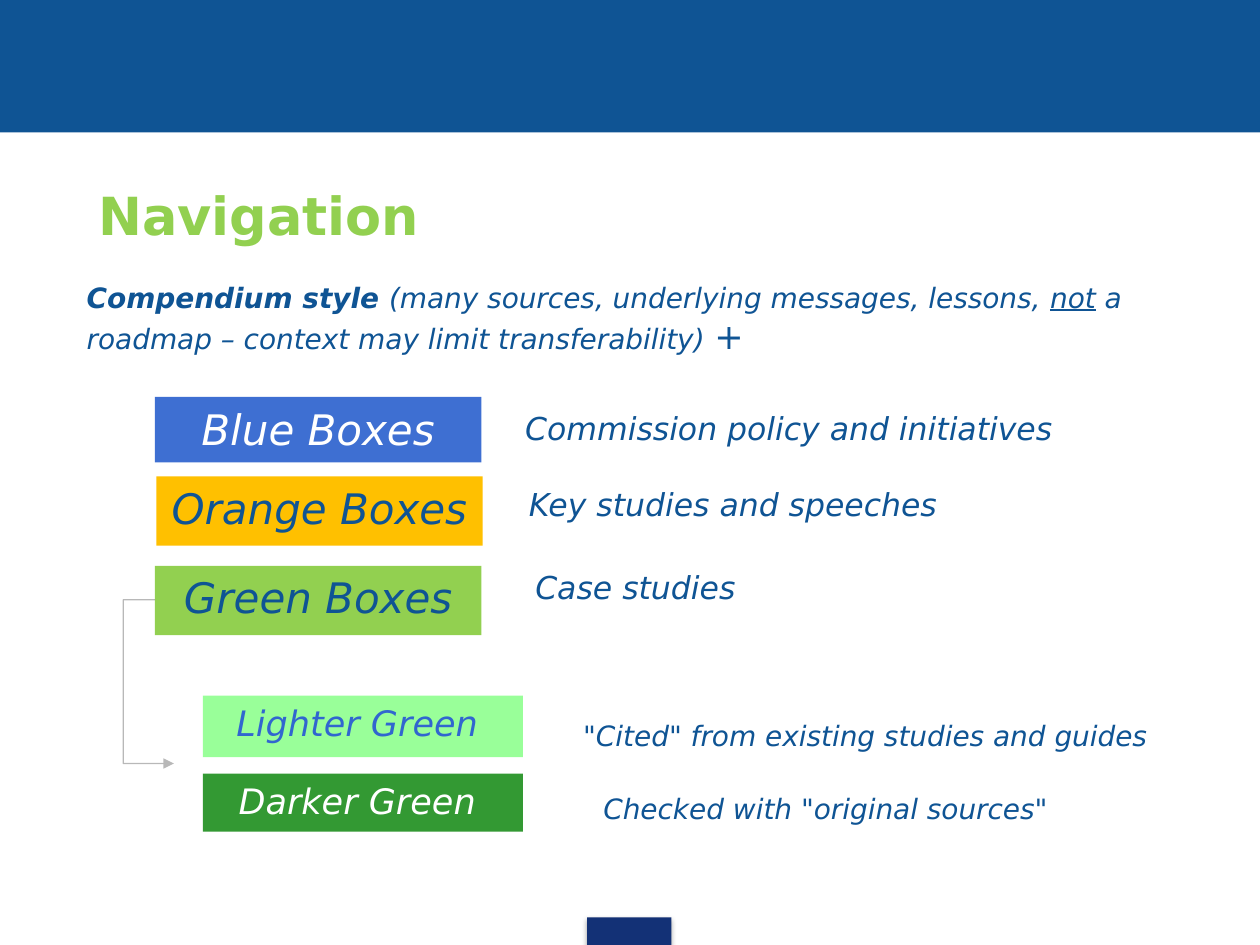
from dataclasses import dataclass

from lxml.etree import SubElement
from pptx import Presentation
from pptx.dml.color import RGBColor
from pptx.enum.shapes import MSO_CONNECTOR, MSO_SHAPE
from pptx.enum.text import MSO_ANCHOR, MSO_AUTO_SIZE, PP_ALIGN
from pptx.oxml import parse_xml
from pptx.oxml.ns import nsdecls, qn
from pptx.util import Inches, Pt


@dataclass(frozen=True)
class Theme:
    font: str = "DejaVu Sans"
    navy: str = "0F5494"
    marker: str = "133176"
    white: str = "FFFFFF"
    black: str = "000000"
    green: str = "92D050"
    blue: str = "3E6FD2"
    orange: str = "FFC000"
    light_green: str = "99FF99"
    dark_green: str = "339933"
    link_blue: str = "3166CF"
    title: int = 30
    box: int = 24
    small_box: int = 20
    label: int = 18
    body: int = 16


THEME = Theme()


def add_run(paragraph, text, size, color=THEME.navy, bold=False, italic=True, underline=False):
    run = paragraph.add_run()
    run.text = text
    font = run.font
    font.name, font.size = THEME.font, Pt(size)
    font.bold, font.italic, font.underline = bold, italic, underline
    font.color.rgb = RGBColor.from_string(color)


def add_rectangle(slide, place, fill):
    shape = slide.shapes.add_shape(MSO_SHAPE.RECTANGLE, *map(Inches, place))
    shape.shadow.inherit = False
    shape.fill.solid()
    shape.fill.fore_color.rgb = RGBColor.from_string(fill)
    shape.line.fill.background()
    return shape


def add_box(slide, place, text, fill, color, size):
    frame = add_rectangle(slide, place, fill).text_frame
    frame.vertical_anchor = MSO_ANCHOR.TOP
    paragraph = frame.paragraphs[0]
    paragraph.alignment = PP_ALIGN.CENTER
    paragraph.space_after = Pt(6)
    add_run(paragraph, text, size, color)


def add_text_box(slide, place):
    """Add an empty wrapping text box and return its first paragraph."""
    frame = slide.shapes.add_textbox(*map(Inches, place)).text_frame
    frame.word_wrap = True
    return frame.paragraphs[0]


def add_label(slide, place, text, size):
    add_run(add_text_box(slide, place), text, size)


def add_title(slide, text):
    title = slide.shapes.title
    title.left, title.top = Inches(0.29), Inches(1.43)
    title.width, title.height = Inches(9), Inches(0.55)
    frame = title.text_frame
    frame.auto_size = MSO_AUTO_SIZE.NONE
    frame.vertical_anchor = MSO_ANCHOR.MIDDLE
    paragraph = frame.paragraphs[0]
    paragraph.alignment = PP_ALIGN.LEFT
    paragraph._p.get_or_add_pPr().set("marL", str(Inches(0.39)))
    add_run(paragraph, text, THEME.title, THEME.green, bold=True, italic=False)


def add_footer_marker(slide):
    marker = add_rectangle(slide, (4.66, 7.28, 0.67, 0.22), THEME.marker)
    effects = marker._element.spPr.find(qn("a:effectLst"))
    effects.append(parse_xml(
        f'<a:outerShdw {nsdecls("a")} blurRad="{Pt(3.1)}" dist="{Pt(1.8)}" dir="5400000" '
        f'rotWithShape="0"><a:srgbClr val="{THEME.black}"><a:alpha val="35000"/>'
        '</a:srgbClr></a:outerShdw>'))


def add_elbow_arrow(slide, start, end, bend):
    """Draw an elbow whose upright part lies at bend, as a share of its width."""
    connector = slide.shapes.add_connector(MSO_CONNECTOR.ELBOW, *map(Inches, start + end))
    connector.line.width = Pt(0.75)
    connector.line.color.rgb = RGBColor.from_string(THEME.black)
    properties = connector._element.spPr
    adjustments = properties.find(qn("a:prstGeom")).get_or_add_avLst()
    SubElement(adjustments, qn("a:gd"), name="adj1", fmla=f"val {round(bend * 100000)}")
    line = properties.find(qn("a:ln"))
    SubElement(line.find(".//" + qn("a:srgbClr")), qn("a:alpha"), val="27000")
    SubElement(line, qn("a:tailEnd"), type="triangle")
    SubElement(properties, qn("a:effectLst"))


def add_introduction(slide):
    paragraph = add_text_box(slide, (0.59, 2.18, 8.74, 0.73))
    add_run(paragraph, "Compendium style ", THEME.body, bold=True)
    add_run(paragraph, "(many sources, underlying messages, lessons, ", THEME.body)
    add_run(paragraph, "not", THEME.body, underline=True)
    add_run(paragraph, " a roadmap – context may limit transferability) ", THEME.body)
    add_run(paragraph, "+", THEME.small_box)


def main():
    presentation = Presentation()
    presentation.slide_width, presentation.slide_height = Inches(10), Inches(7.5)
    slide = presentation.slides.add_slide(presentation.slide_layouts[5])

    add_rectangle(slide, (0, 0, 10, 1.05), THEME.navy)
    add_footer_marker(slide)
    add_title(slide, "Navigation")
    add_introduction(slide)

    boxes = [
        ((1.23, 3.15, 2.59, 0.52), "Blue Boxes", THEME.blue, THEME.white, THEME.box),
        ((1.24, 3.78, 2.59, 0.55), "Orange Boxes", THEME.orange, THEME.navy, THEME.box),
        ((1.23, 4.49, 2.59, 0.55), "Green Boxes", THEME.green, THEME.navy, THEME.box),
        ((1.61, 5.52, 2.54, 0.49), "Lighter Green ", THEME.light_green, THEME.link_blue,
         THEME.small_box),
        ((1.61, 6.14, 2.54, 0.46), "Darker Green ", THEME.dark_green, THEME.white,
         THEME.small_box),
    ]
    for box in boxes:
        add_box(slide, *box)

    labels = [
        ((4.07, 3.2, 4.43, 0.4), "Commission policy and initiatives", THEME.label),
        ((4.1, 3.8, 3.46, 0.4), "Key studies and speeches", THEME.label),
        ((4.15, 4.46, 2.07, 0.4), "Case studies", THEME.label),
        ((4.53, 5.65, 4.96, 0.38), '"Cited" from existing studies and guides', THEME.body),
        ((4.69, 6.23, 4.41, 0.38), 'Checked with "original sources"', THEME.body),
    ]
    for label in labels:
        add_label(slide, *label)

    add_elbow_arrow(slide, (1.23, 4.76), (1.38, 6.06), bend=-1.68)
    presentation.save("out.pptx")


if __name__ == "__main__":
    main()
